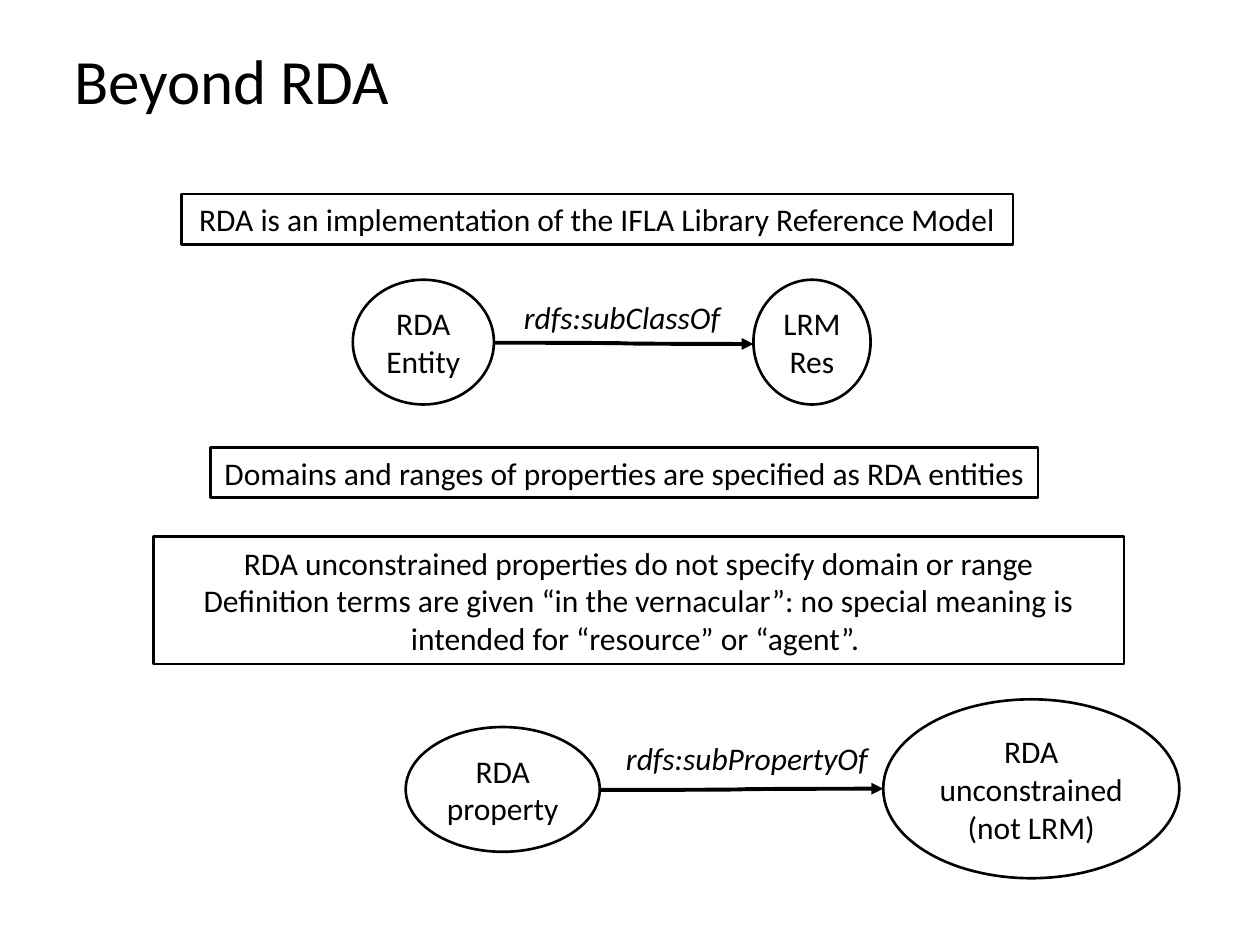
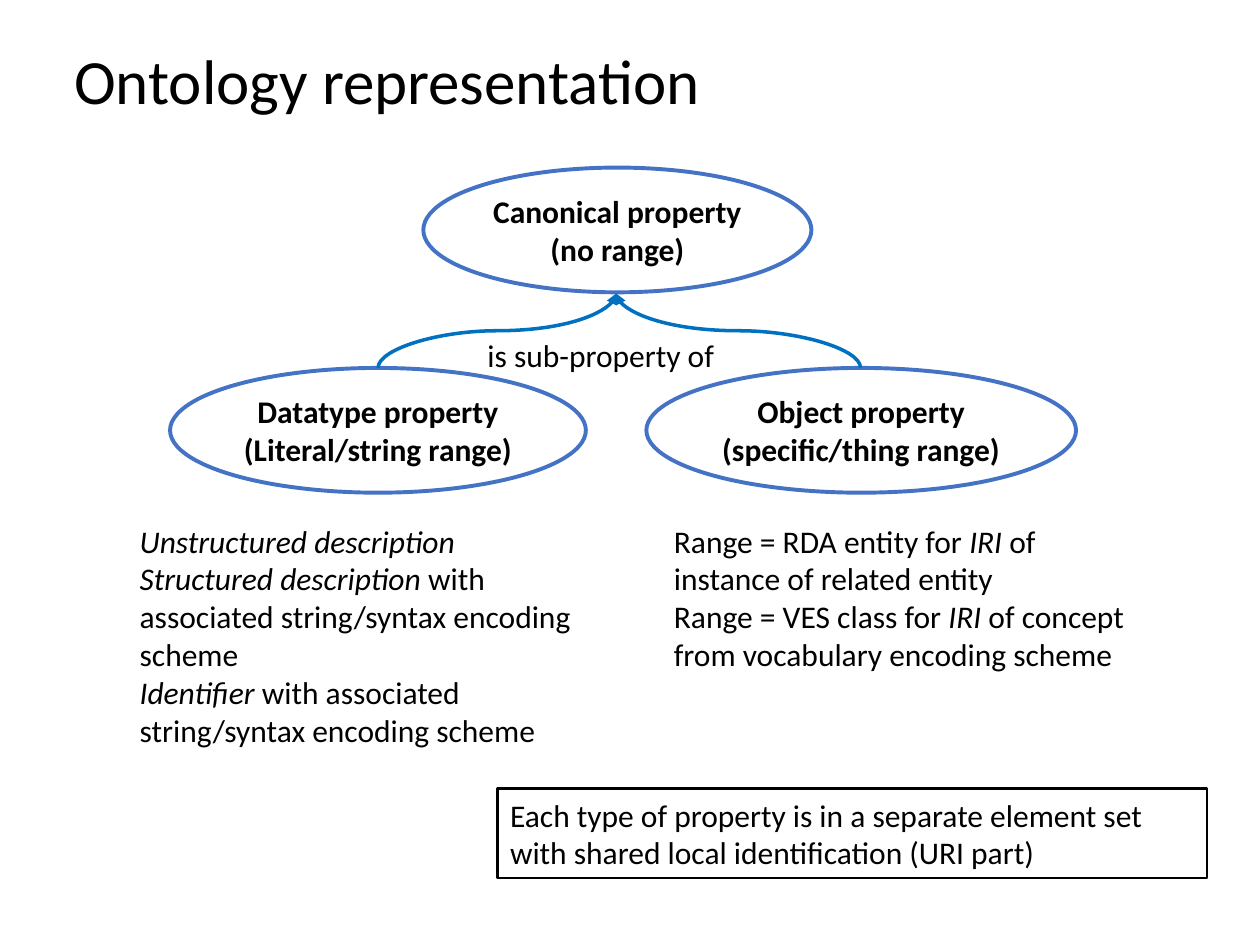
from dataclasses import dataclass
from typing import Optional

from lxml import etree
from pptx import Presentation
from pptx.dml.color import RGBColor
from pptx.enum.shapes import MSO_CONNECTOR, MSO_SHAPE as SHAPE
from pptx.enum.text import MSO_AUTO_SIZE, PP_ALIGN as ALIGN
from pptx.oxml.ns import qn
from pptx.util import Emu, Pt

PX = 9144  # EMU per px, 100 px to the inch
FONT = "Calibri"
BLACK = RGBColor(0x00, 0x00, 0x00)
OVAL_BLUE = RGBColor(0x44, 0x72, 0xC4)
ARROW_BLUE = RGBColor(0x00, 0x70, 0xC0)


@dataclass(frozen=True)
class Label:
    """Text in a box; *stars* enclose italic words, and no shape means no outline."""
    x: int
    y: int
    w: int
    h: int
    lines: tuple[str, ...]
    shape: Optional[SHAPE] = None
    color: RGBColor = BLACK
    weight: float = 1.5
    align: ALIGN = ALIGN.LEFT
    wrap: bool = False
    bold: bool = False
    size: int = 18


@dataclass(frozen=True)
class Arrow:
    x1: int
    y1: int
    x2: int
    y2: int
    color: RGBColor = BLACK
    weight: float = 2.25
    upward: bool = False


def title(text: str, w: int) -> Label:
    return Label(49, 28, w, 71, (text,), size=36)


def oval(x: int, y: int, w: int, *lines: str, h: int = 99) -> Label:
    return Label(x, y, w, h, lines, SHAPE.OVAL, align=ALIGN.CENTER)


def property_oval(x: int, y: int, w: int, *lines: str) -> Label:
    return Label(x, y, w, 99, lines, SHAPE.OVAL, OVAL_BLUE, 2.25, ALIGN.CENTER, bold=True)


def statement(x: int, y: int, w: int, h: int, *lines: str,
              align: ALIGN = ALIGN.CENTER, wrap: bool = False) -> Label:
    return Label(x, y, w, h, lines, SHAPE.RECTANGLE, align=align, wrap=wrap)


def details(x: int, h: int, *lines: str) -> Label:
    return Label(x, 409, 382, h, lines, wrap=True)


def draw_label(s, label: Label) -> None:
    box = [Emu(v * PX) for v in (label.x, label.y, label.w, label.h)]
    if label.shape is None:
        sp = s.shapes.add_textbox(*box)
    else:
        sp = s.shapes.add_shape(label.shape, *box)
        sp.shadow.inherit = False
        sp.fill.background()
        sp.line.color.rgb = label.color
        sp.line.width = Pt(label.weight)
    tf = sp.text_frame
    tf.word_wrap = label.wrap
    tf.auto_size = MSO_AUTO_SIZE.SHAPE_TO_FIT_TEXT
    for i, line in enumerate(label.lines):
        p = tf.add_paragraph() if i else tf.paragraphs[0]
        p.alignment = label.align
        p.font.name, p.font.size, p.font.bold = FONT, Pt(label.size), label.bold
        p.font.color.rgb = BLACK
        for j, part in enumerate(line.split("*")):
            if part:
                r = p.add_run()
                r.text = part
                if j % 2:
                    r.font.italic = True


def draw_arrow(s, arrow: Arrow) -> None:
    """Draw a curved arrow; an upward one is a sideways curve turned on its centre."""
    x1, y1, x2, y2 = (v * PX for v in (arrow.x1, arrow.y1, arrow.x2, arrow.y2))
    ends, turn = (x1, y1, x2, y2), 0
    if arrow.upward:
        turn, side = (270, 1) if x2 < x1 else (90, -1)
        cx, cy = (x1 + x2) // 2, (y1 + y2) // 2
        dx, dy = side * (y1 - y2) // 2, side * (x2 - x1) // 2
        ends = (cx - dx, cy - dy, cx + dx, cy + dy)
    cxn = s.shapes.add_connector(MSO_CONNECTOR.CURVE, *map(Emu, ends))
    cxn.line.color.rgb = arrow.color
    cxn.line.width = Pt(arrow.weight)
    sp_pr = cxn._element.spPr
    if turn:
        sp_pr.find(qn("a:xfrm")).set("rot", str(turn * 60000))
    etree.SubElement(sp_pr.find(qn("a:ln")), qn("a:tailEnd"), type="triangle")
    etree.SubElement(sp_pr, qn("a:effectLst"))


BEYOND_RDA = (
    title("Beyond RDA", 273),
    statement(144, 154, 660, 40, "RDA is an implementation of the IFLA Library Reference Model"),
    oval(598, 222, 93, "LRM", "Res"),
    oval(280, 222, 112, "RDA", "Entity"),
    Arrow(392, 272, 598, 273),
    Label(406, 232, 178, 40, ("*rdfs:subClassOf*",)),
    statement(167, 355, 657, 40,
              "Domains and ranges of properties are specified as RDA entities"),
    statement(122, 426, 770, 101,
              "RDA unconstrained properties do not specify domain or range",
              "Definition terms are given “in the vernacular”: no special meaning is "
              "intended for “resource” or “agent”. ", wrap=True),
    oval(322, 577, 154, "RDA", "property"),
    oval(701, 555, 235, "RDA", "unconstrained", "(not LRM)", h=142),
    Arrow(476, 627, 701, 626),
    Label(487, 582, 214, 40, ("*rdfs:subPropertyOf*",)),
)

ONTOLOGY = (
    title("Ontology representation", 522),
    property_oval(336, 133, 308, "Canonical property", "(no range)"),
    property_oval(135, 292, 330, "Datatype property", "(Literal/string range)"),
    property_oval(513, 292, 341, "Object property", "(specific/thing range)"),
    *(Arrow(x, 292, 489, 233, ARROW_BLUE, 2, upward=True) for x in (683, 300)),
    Label(377, 262, 202, 40, ("is sub-property of",)),
    details(101, 192, "*Unstructured description*",
            "*Structured description *with associated string/syntax encoding scheme",
            "*Identifier *with associated string/syntax encoding scheme"),
    details(525, 131, "Range = RDA entity for *IRI* of instance of related entity",
            "Range = VES class for *IRI* of concept from vocabulary encoding scheme"),
    statement(395, 626, 563, 71,
              "Each type of property is in a separate element set with shared local "
              "identification (URI part)", align=ALIGN.LEFT, wrap=True),
)


def main() -> None:
    prs = Presentation()
    prs.slide_width, prs.slide_height = Emu(1000 * PX), Emu(750 * PX)
    for items in (BEYOND_RDA, ONTOLOGY):
        s = prs.slides.add_slide(prs.slide_layouts[6])
        for item in items:
            if isinstance(item, Arrow):
                draw_arrow(s, item)
            else:
                draw_label(s, item)
    prs.save("out.pptx")


if __name__ == "__main__":
    main()
